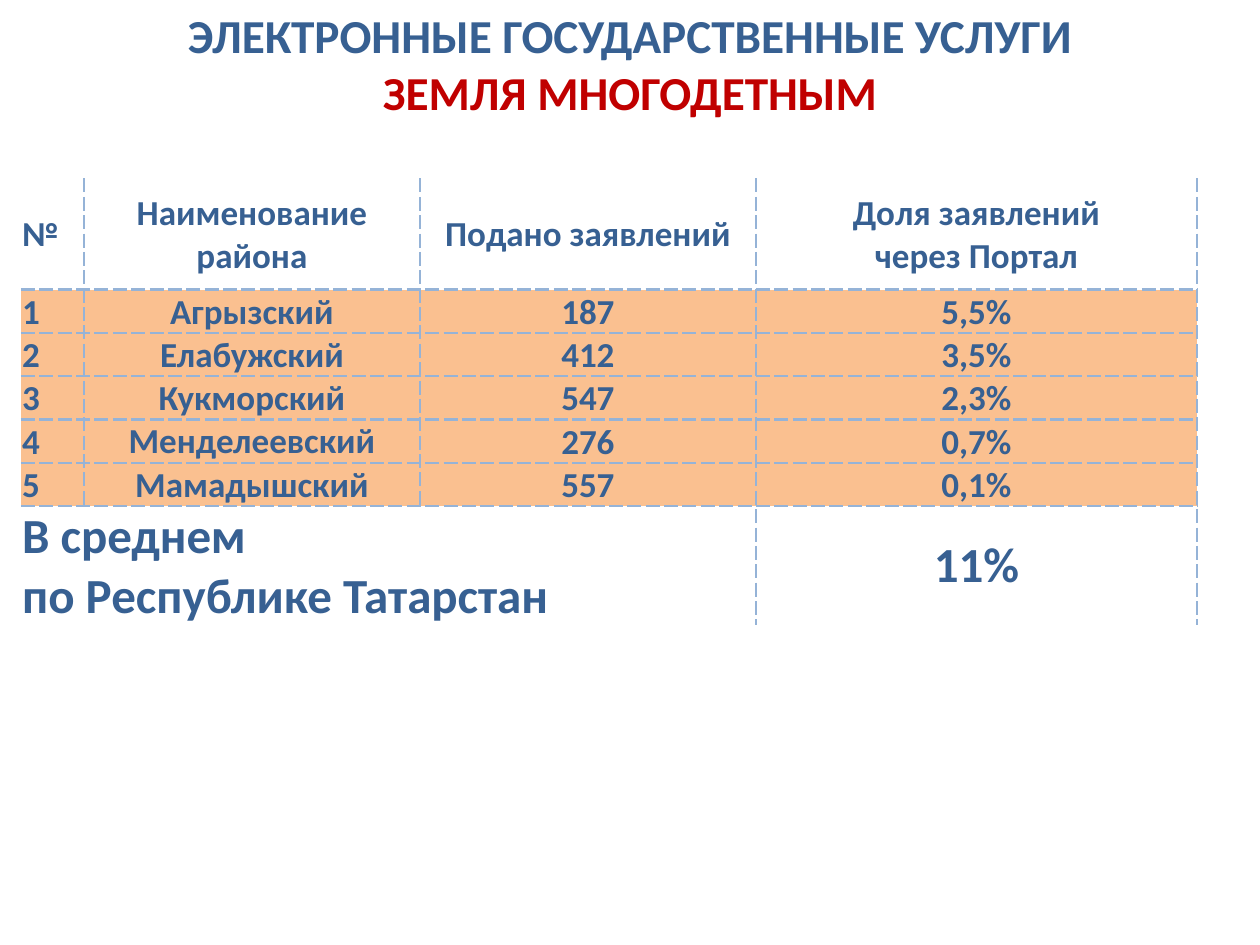
from lxml.etree import SubElement
from pptx import Presentation
from pptx.dml.color import RGBColor
from pptx.enum.text import MSO_ANCHOR as ANCHOR, PP_ALIGN as ALIGN
from pptx.oxml.ns import qn
from pptx.util import Inches, Pt

COLORS = {"text": "376092", "accent": "C00000", "row": "FAC090", "border": "95B3D7"}
FONT = "Calibri"
W, H = Inches(10), Inches(7.5)
UNIT = W / 60  # one column of the slide grid
COLUMNS = (3, 16, 16, 21)  # table columns in grid units

HEADER = ("№", "Наименование района", "Подано заявлений", "Доля заявлений\nчерез Портал")
DISTRICTS = (
    ("Агрызский", "187", "5,5%"),
    ("Елабужский", "412", "3,5%"),
    ("Кукморский", "547", "2,3%"),
    ("Менделеевский", "276", "0,7%"),
    ("Мамадышский", "557", "0,1%"),
)
TOTAL = ("В среднем\nпо Республике Татарстан", "", "", "11%")


def write(tf, text, size=20, colors=("text",), align=ALIGN.CENTER):
    """Write one paragraph per line; the last color serves any further lines."""
    for i, line in enumerate(text.split("\n")):
        p = tf.paragraphs[0] if i == 0 else tf.add_paragraph()
        p.alignment = align
        r = p.add_run()
        r.text = line
        r.font.name, r.font.size, r.font.bold = FONT, Pt(size), True
        color = colors[min(i, len(colors) - 1)]
        r.font.color.rgb = RGBColor.from_string(COLORS[color])


def add_border(cell, sides):
    tc_pr = cell._tc.get_or_add_tcPr()
    for side in "LRTB":
        ln = SubElement(tc_pr, qn(f"a:ln{side}"), w=str(Pt(1.5)))
        if side in sides:
            fill = SubElement(ln, qn("a:solidFill"))
            SubElement(fill, qn("a:srgbClr"), val=COLORS["border"])
            SubElement(ln, qn("a:prstDash"), val="sysDash")
        else:
            SubElement(ln, qn("a:noFill"))


def add_title(s, x, y, w, h):
    tf = s.shapes.add_textbox(x, y, w, h).text_frame
    tf.word_wrap = True
    write(tf, "ЭЛЕКТРОННЫЕ ГОСУДАРСТВЕННЫЕ УСЛУГИ\nЗЕМЛЯ МНОГОДЕТНЫМ",
          size=27, colors=("text", "accent"))


def add_district_table(s, x, y, w, h):
    body = [(str(n), *row) for n, row in enumerate(DISTRICTS, 1)]
    rows = [HEADER, *body, TOTAL]
    last = len(rows) - 1
    frame = s.shapes.add_table(len(rows), len(COLUMNS), x, y, w, h)
    table = frame.table
    table.first_row = table.horz_banding = False

    # Column widths and minimum row heights
    for column, share in zip(table.columns, COLUMNS):
        column.width = round(w * share / sum(COLUMNS))
    for i, row in enumerate(table.rows):
        row.height = round(h * (0.25 if i == 0 else 0.082))
    frame.height = h
    table.cell(last, 0).merge(table.cell(last, 2))

    for i, values in enumerate(rows):
        for j, value in enumerate(values):
            cell = table.cell(i, j)
            # Open outer edges at the left, top and bottom
            add_border(cell, "R" + "L" * (j > 0) + "T" * (i > 0) + "B" * (i < last))
            in_body = 0 < i < last
            if in_body:
                cell.fill.solid()
                cell.fill.fore_color.rgb = RGBColor.from_string(COLORS["row"])
            else:
                cell.fill.background()
            if cell.is_spanned:
                continue
            cell.margin_left = cell.margin_right = cell.margin_top = Inches(0.01)
            cell.margin_bottom = 0
            cell.vertical_anchor = ANCHOR.BOTTOM if in_body and j == 1 else ANCHOR.MIDDLE
            write(cell.text_frame, value, size=28 if i == last else 20,
                  align=ALIGN.LEFT if j == 0 else ALIGN.CENTER)


def main():
    prs = Presentation()
    prs.slide_width, prs.slide_height = W, H
    s = prs.slides.add_slide(prs.slide_layouts[6])
    add_title(s, 0, 0, W, round(H * 0.135))
    add_district_table(s, round(UNIT), round(UNIT * 8.5),
                       round(UNIT * sum(COLUMNS)), round(H * 0.47))
    prs.save("out.pptx")


if __name__ == "__main__":
    main()
